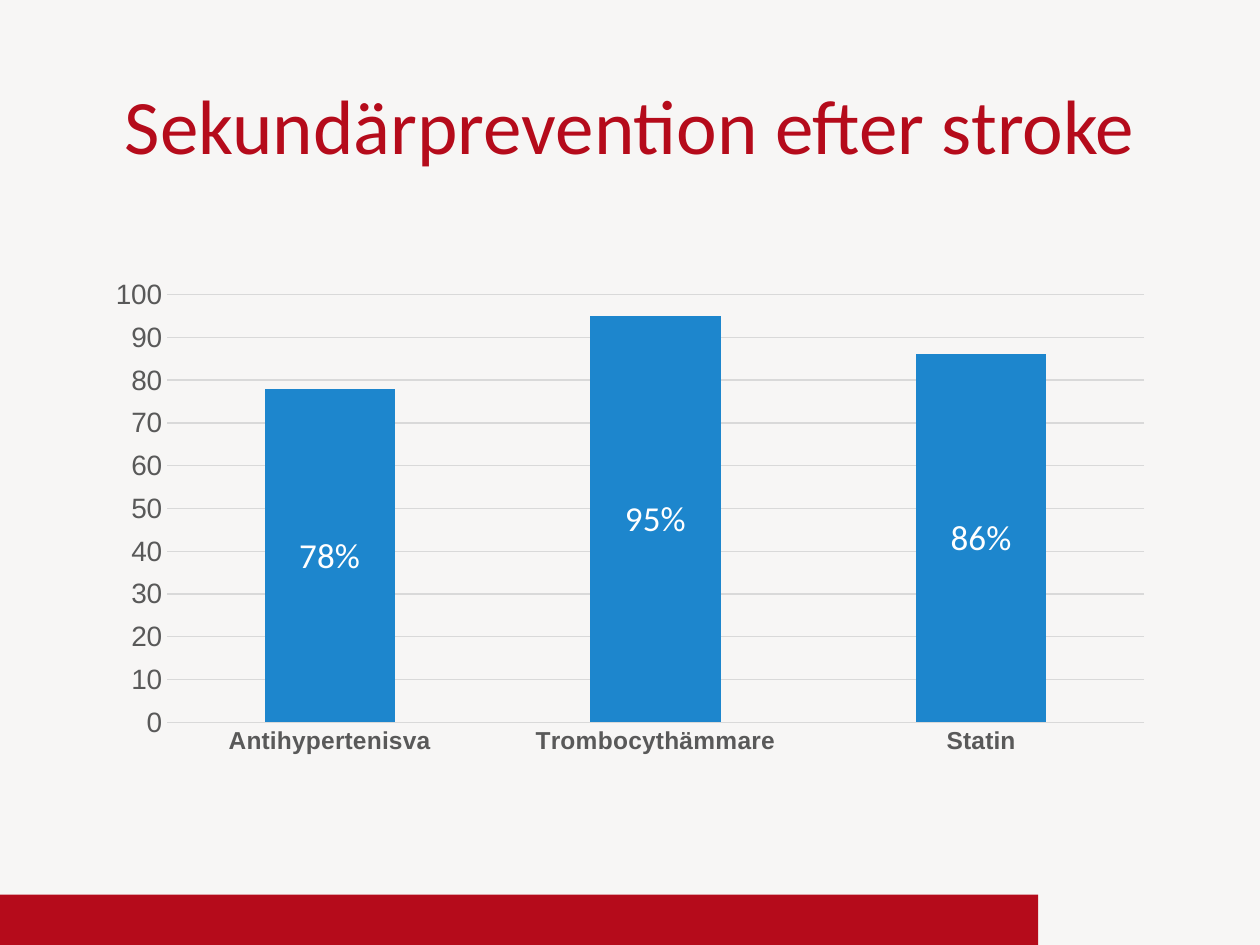
from pptx import Presentation
from pptx.chart.data import CategoryChartData
from pptx.dml.color import RGBColor
from pptx.enum.chart import XL_CHART_TYPE as ChartType, XL_LABEL_POSITION as LabelPosition, XL_TICK_MARK as TickMark
from pptx.enum.shapes import MSO_SHAPE as Shape
from pptx.enum.text import MSO_ANCHOR as Anchor, PP_ALIGN as Align
from pptx.util import Inches, Pt

RED = "B50B1B"
BLUE = "1D86CD"
GREY = "595959"
TREATMENTS = {"Antihypertenisva": 78, "Trombocythämmare": 95, "Statin": 86}


def paint(color_format, color):
    """Set a colour from a hex string."""
    color_format.rgb = RGBColor.from_string(color)


def fill_solid(fill, color):
    """Fill with one colour."""
    fill.solid()
    paint(fill.fore_color, color)


def set_font(font, name, size, color, bold=False):
    """Set typeface, size, colour and weight."""
    font.name, font.size, font.bold = name, Pt(size), bold
    paint(font.color, color)


def add_footer_band(page, left, top, width, height):
    """Draw the red band along the foot of the slide."""
    band = page.shapes.add_shape(
        Shape.RECTANGLE, Inches(left), Inches(top), Inches(width), Inches(height))
    band.shadow.inherit = False
    fill_solid(band.fill, RED)
    band.line.fill.background()


def add_title(page, left, top, width, height):
    """Place the centred heading."""
    box = page.shapes.add_textbox(Inches(left), Inches(top), Inches(width), Inches(height))
    frame = box.text_frame
    frame.word_wrap = True
    frame.vertical_anchor = Anchor.MIDDLE
    para = frame.paragraphs[0]
    para.text = "Sekundärprevention efter stroke"
    para.alignment = Align.CENTER
    set_font(para.font, "Calibri", 44, RED)


def style_axis(axis, size, bold=False):
    """Hide the axis line and ticks and set its label font."""
    axis.major_tick_mark = axis.minor_tick_mark = TickMark.NONE
    axis.format.line.fill.background()
    set_font(axis.tick_labels.font, "Arial", size, GREY, bold)


def add_treatment_chart(page, left, top, width, height):
    """Place the column chart of treatment shares."""
    data = CategoryChartData()
    data.categories = list(TREATMENTS)
    data.add_series("Series 1", list(TREATMENTS.values()))
    chart = page.shapes.add_chart(
        ChartType.COLUMN_STACKED, Inches(left), Inches(top),
        Inches(width), Inches(height), data).chart
    chart.has_legend = chart.has_title = False
    set_font(chart.font, "Calibri", 10, "000000")

    style_axis(chart.category_axis, 14, bold=True)
    shares = chart.value_axis
    style_axis(shares, 16)
    shares.minimum_scale, shares.maximum_scale, shares.major_unit = 0, 100, 10
    shares.has_major_gridlines = True
    grid = shares.major_gridlines.format.line
    grid.width = Pt(0.75)
    paint(grid.color, "D9D9D9")

    plot = chart.plots[0]
    plot.vary_by_categories = False
    plot.gap_width, plot.overlap = 150, 100
    fill_solid(plot.series[0].format.fill, BLUE)
    plot.has_data_labels = True
    labels = plot.data_labels
    labels.show_value = True
    labels.number_format = '0"%"'
    labels.number_format_is_linked = False
    labels.position = LabelPosition.CENTER
    set_font(labels.font, "Calibri", 20, "FFFFFF")


def main():
    """Build and save the slide."""
    deck = Presentation()
    deck.slide_width, deck.slide_height = Inches(10), Inches(7.5)
    page = deck.slides.add_slide(deck.slide_layouts[6])
    fill_solid(page.background.fill, "F7F6F5")
    add_footer_band(page, 0, 7.1, 8.24, 0.4)
    add_title(page, 0.75, 0.18, 8.5, 1.61)
    add_treatment_chart(page, 0.75, 2.14, 8.5, 3.93)
    deck.save("out.pptx")


if __name__ == "__main__":
    main()
